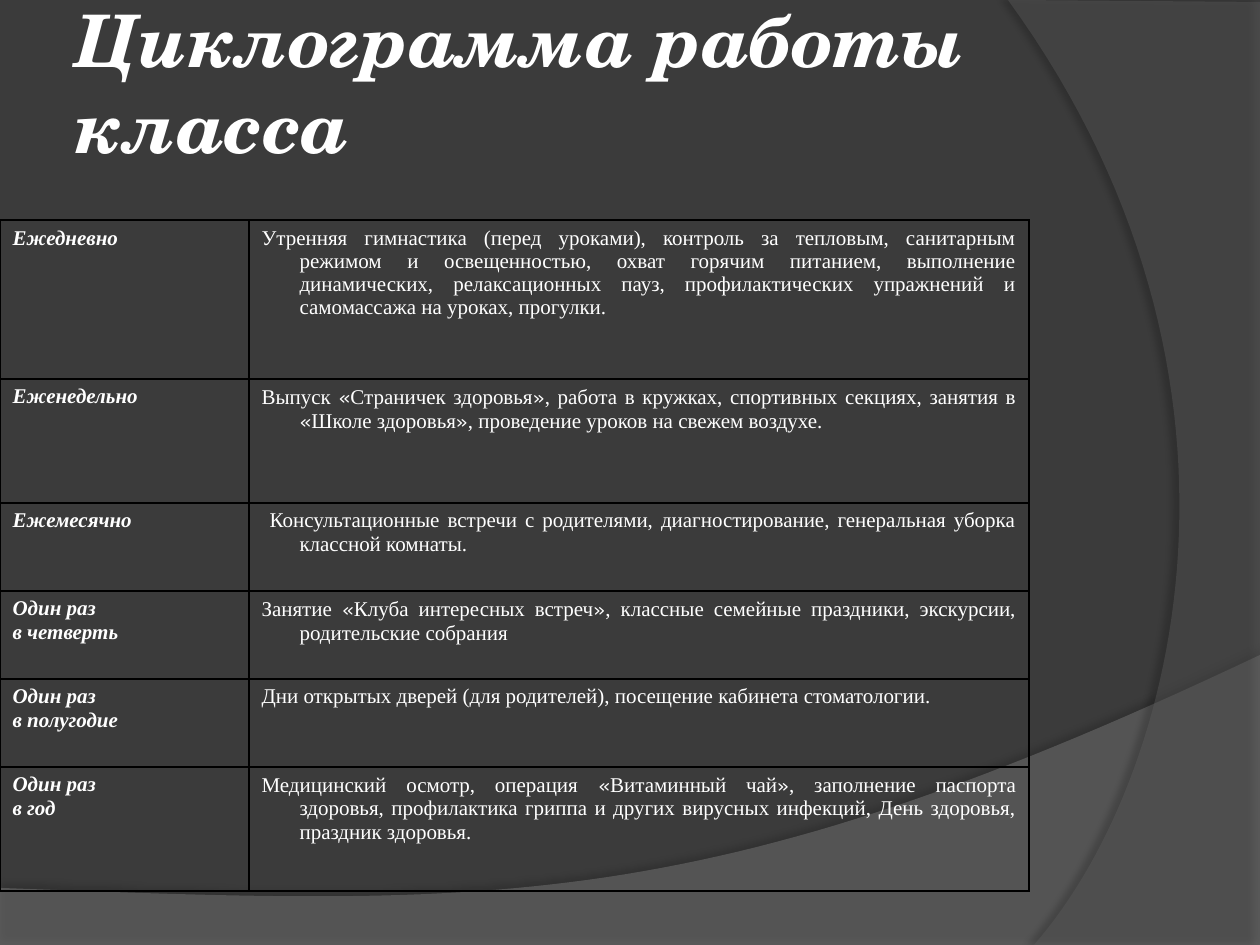
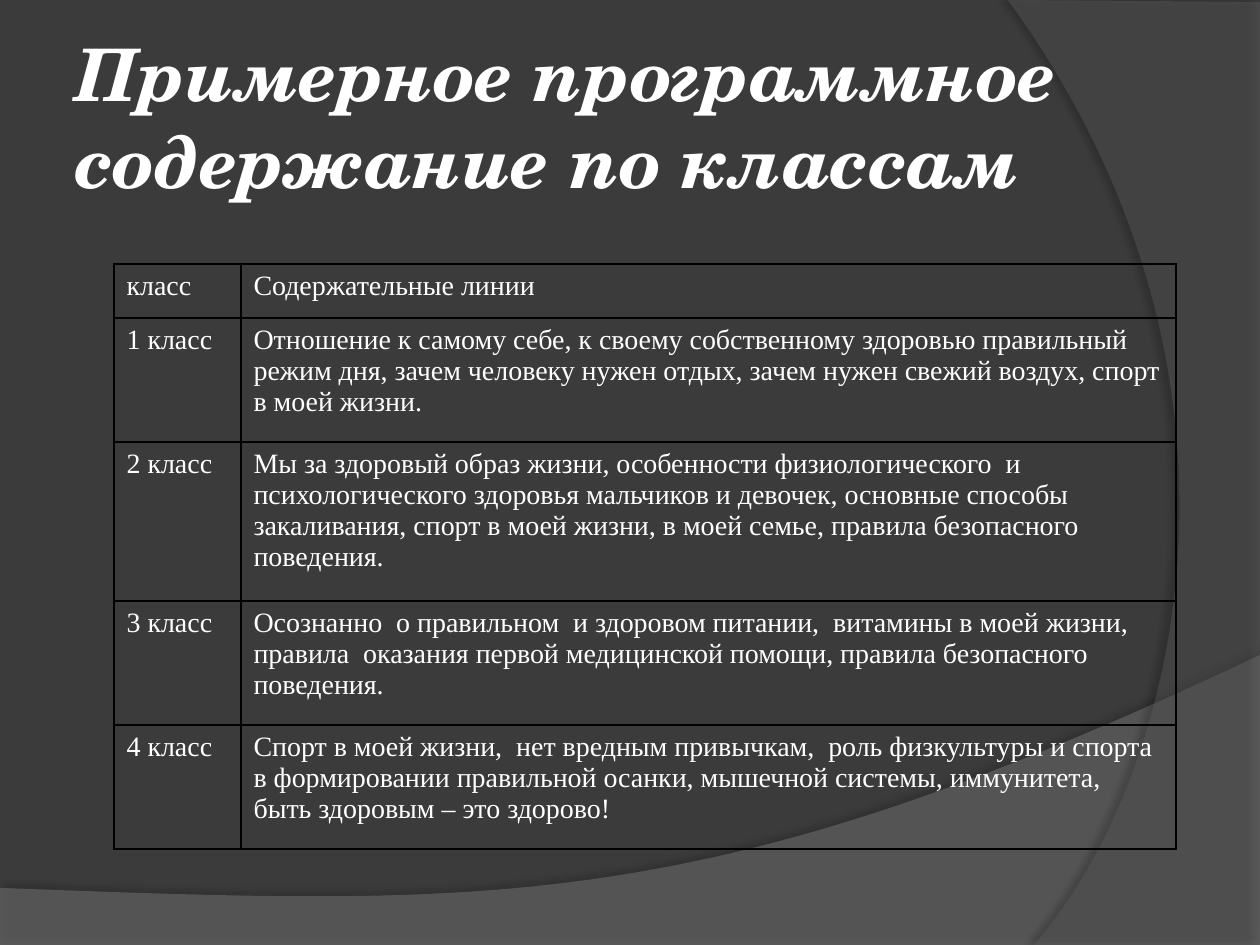
import pptx
import pptx.util
import pptx.dml.color
import pptx.enum.text
import pptx.oxml
import pptx.oxml.ns

UNIT = 914400 / 126
WIDE, HIGH = 1260, 945
HUES = {"back": "3B3B3B", "wave": "7F7F7F", "arc": "5E5E5E",
        "text": "FFFFFF", "edge": "000000"}
FONTS = {"title": "TeX Gyre Schola", "body": "Times New Roman", "quote": "Comic Neue"}
TITLE_SIZE = 41.4
HANG = 38
STEPS = 60

CYCLE = [
    ("Ежедневно", "Утренняя гимнастика (перед уроками), контроль за тепловым, санитарным режимом и освещенностью, охват горячим питанием, выполнение динамических, релаксационных пауз, профилактических упражнений и самомассажа на уроках, прогулки."),
    ("Еженедельно", "Выпуск «Страничек здоровья», работа в кружках, спортивных секциях, занятия в «Школе здоровья», проведение уроков на свежем воздухе."),
    ("Ежемесячно", " Консультационные встречи с родителями, диагностирование, генеральная уборка классной комнаты."),
    ("Один раз \nв четверть", "Занятие «Клуба интересных встреч», классные семейные праздники, экскурсии, родительские собрания"),
    ("Один раз \nв полугодие", "Дни открытых дверей (для родителей), посещение кабинета стоматологии."),
    ("Один раз \nв год", "Медицинский осмотр, операция «Витаминный чай», заполнение паспорта здоровья, профилактика гриппа и других вирусных инфекций, День здоровья, праздник здоровья."),
]
THEMES = [
    ("класс", "Содержательные линии"),
    ("1 класс", "Отношение к самому себе, к своему собственному здоровью правильный режим дня, зачем человеку нужен отдых, зачем нужен свежий воздух, спорт в моей жизни."),
    ("2 класс", "Мы за здоровый образ жизни, особенности физиологического  и психологического здоровья мальчиков и девочек, основные способы закаливания, спорт в моей жизни, в моей семье, правила безопасного поведения."),
    ("3 класс", "Осознанно  о правильном  и здоровом питании,  витамины в моей жизни, правила  оказания первой медицинской помощи, правила безопасного поведения."),
    ("4 класс", "Спорт в моей жизни,  нет вредным привычкам,  роль физкультуры и спорта в формировании правильной осанки, мышечной системы, иммунитета, быть здоровым – это здорово!"),
]


def px(size):
    return pptx.util.Emu(round(size * UNIT))


def hue(name):
    return pptx.dml.color.RGBColor.from_string(HUES[name])


def node(text):
    space = pptx.oxml.ns.nsdecls("a")
    return pptx.oxml.parse_xml(text.replace(" ", f" {space} ", 1))


def style(run, font, size, bold=False):
    run.font.name = FONTS[font]
    run.font.size = pptx.util.Pt(size)
    run.font.bold = run.font.italic = bold
    run.font.color.rgb = hue("text")


def curve(start, pull, push, end):
    for step in range(STEPS + 1):
        t = step / STEPS
        u = 1 - t
        yield tuple(u**3 * a + 3 * u * u * t * b + 3 * u * t * t * c + t**3 * d
                    for a, b, c, d in zip(start, pull, push, end))


def band(slide, box, points, fill, clear, shade, reach, turn):
    left, top = box
    spots = [(px(left + x), px(top + y)) for x, y in points]
    pen = slide.shapes.build_freeform(*spots[0], scale=1.0)
    pen.add_line_segments(spots[1:], close=True)
    shape = pen.convert_to_shape()
    shape.fill.solid()
    shape.fill.fore_color.rgb = hue(fill)
    shape.line.fill.background()
    shape.shadow.inherit = False
    props = shape.element.spPr
    props.xpath("a:solidFill/a:srgbClr")[0].append(node(f'<a:alpha val="{clear * 1000}"/>'))
    props.xpath("a:effectLst")[0].append(node(
        f'<a:outerShdw blurRad="{pptx.util.Pt(4)}" dist="{pptx.util.Pt(reach)}" '
        f'dir="{turn * 60000}" algn="ctr" rotWithShape="0">'
        f'<a:srgbClr val="{HUES["edge"]}"><a:alpha val="{shade * 1000}"/></a:srgbClr>'
        '</a:outerShdw>'))
    return shape


def dress(deck, slide):
    master = deck.slide_master
    master.background.fill.solid()
    master.background.fill.fore_color.rgb = hue("back")
    wave = [(0, 290), *curve((WIDE, 0), (704, 264), (493, 251), (0, 233)), (0, 290), (WIDE, 290)]
    wave = [(0, 290), (WIDE, 290), *curve((WIDE, 0), (704, 264), (493, 251), (0, 233))]
    arc = [(252, 2), (252, HIGH), *curve((26, HIGH), (170, 780), (275, 378), (0, 0))]
    bands = [band(slide, (0, 655), wave, "wave", 45, 35, 3.5, 270),
             band(slide, (1008, 0), arc, "arc", 40, 45, 4, 180)]
    for place, shape in enumerate(bands, 2):
        master.element.cSld.spTree.insert(place, shape.element)


def head(slide, box, text):
    title = slide.shapes.title
    title.left, title.top, title.width, title.height = map(px, box)
    frame = title.text_frame
    frame.text = text
    frame.word_wrap = True
    frame.auto_size = pptx.enum.text.MSO_AUTO_SIZE.NONE
    frame.vertical_anchor = pptx.enum.text.MSO_ANCHOR.MIDDLE
    line = frame.paragraphs[0]
    line.alignment = pptx.enum.text.PP_ALIGN.LEFT
    style(line.runs[0], "title", TITLE_SIZE, True)


def frame_cell(cell):
    cell.fill.background()
    props = cell._tc.get_or_add_tcPr()
    for place, side in enumerate(("lnL", "lnR", "lnT", "lnB")):
        props.insert(place, node(
            f'<a:{side} w="{pptx.util.Pt(1)}"><a:solidFill>'
            f'<a:srgbClr val="{HUES["edge"]}"/></a:solidFill></a:{side}>'))


def fill_cell(cell, text, size, bold, hang):
    frame = cell.text_frame
    frame.text = text
    for line in frame.paragraphs:
        parts = line.text.replace("«", "|«|").replace("»", "|»|").split("|")
        line.clear()
        for part in parts:
            run = line.add_run()
            run.text = part
            style(run, "quote" if part in "«»" else "body", size, bold)
        if hang:
            line.alignment = pptx.enum.text.PP_ALIGN.JUSTIFY
            props = line._p.get_or_add_pPr()
            props.set("marL", str(px(HANG)))
            props.set("indent", str(-px(HANG)))
    frame_cell(cell)


def grid(slide, spot, cols, rows, data, size, hang=False):
    box = (*spot, sum(cols), sum(rows))
    table = slide.shapes.add_table(len(rows), len(cols), *map(px, box)).table
    table.first_row = table.horz_banding = False
    for col, wide in zip(table.columns, cols):
        col.width = px(wide)
    for row, high, texts in zip(table.rows, rows, data):
        row.height = px(high)
        for place, (cell, text) in enumerate(zip(row.cells, texts)):
            fill_cell(cell, text, size, hang and place == 0, hang)


def main():
    deck = pptx.Presentation()
    deck.slide_width, deck.slide_height = px(WIDE), px(HIGH)
    first, second = (deck.slides.add_slide(deck.slide_layouts[5]) for _ in range(2))
    dress(deck, first)
    head(first, (63, 38, 1029, 87), "Циклограмма работы класса")
    grid(first, (0, 220), (249, 780), (159, 124, 88, 88, 88, 124), CYCLE, 12, True)
    head(second, (63, 38, 1029, 157), "Примерное программное содержание по классам")
    grid(second, (114, 264), (127, 935), (54, 124, 159, 124, 124), THEMES, 16)
    deck.save("out.pptx")


if __name__ == "__main__":
    main()
